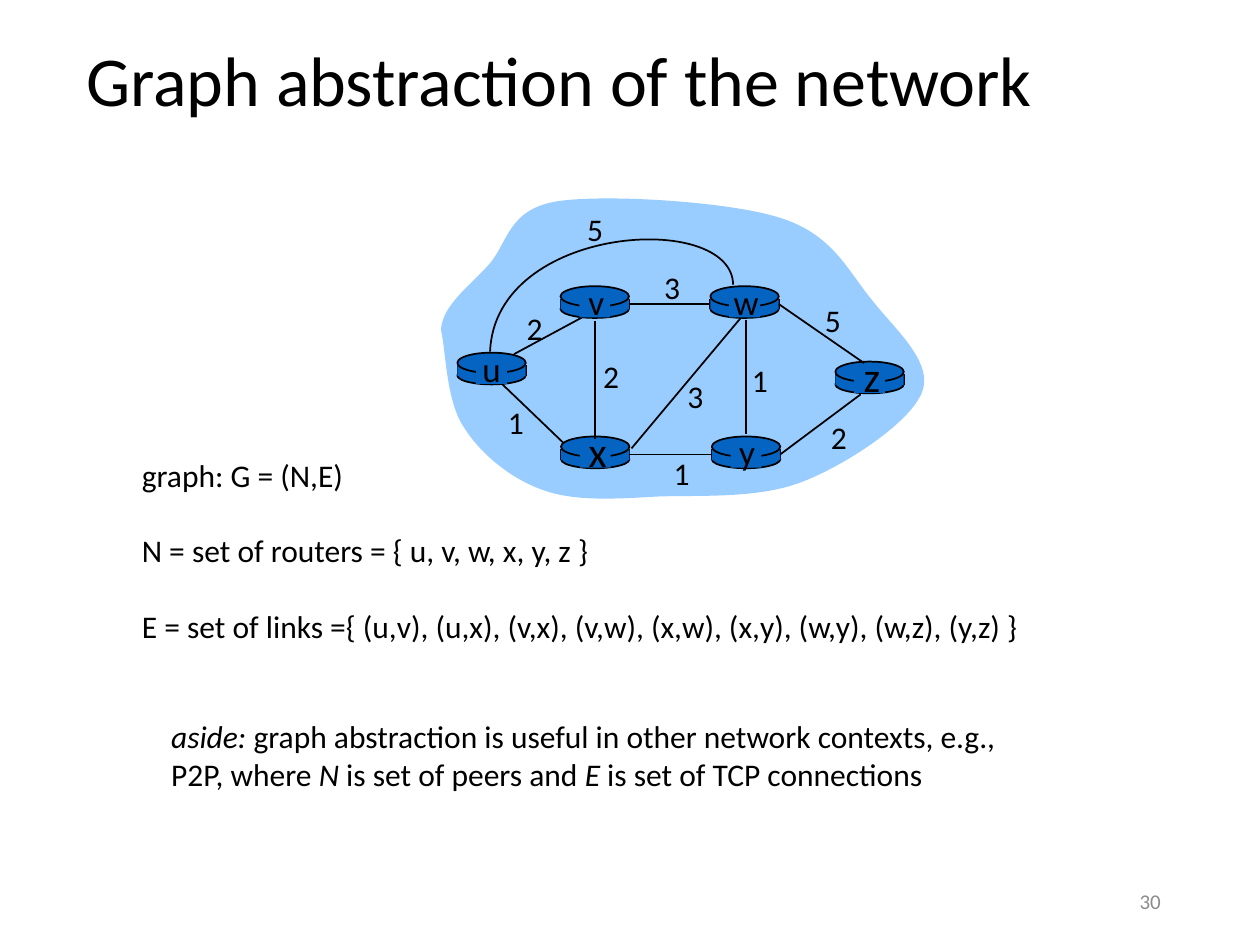
import dataclasses

import pptx
import pptx.dml.color
import pptx.enum.shapes
import pptx.enum.text
import pptx.oxml
import pptx.oxml.ns
import pptx.util

Cm = pptx.util.Cm
Pt = pptx.util.Pt
Shape = pptx.enum.shapes.MSO_SHAPE
Align = pptx.enum.text.PP_ALIGN


@dataclasses.dataclass(frozen=True)
class Theme:
    font: str = "Calibri"
    ink: str = "000000"
    muted: str = "8C8C8C"
    cloud: str = "99CCFF"
    router: str = "0563C1"
    title_size: int = 40
    body_size: int = 18
    number_size: int = 12
    line_width: int = 1


theme = Theme()

# Content; all places are in centimetres
TITLE = "Graph abstraction of the network"
DEFINITIONS = [
    [("graph: G = (N,E)", False)],
    [("N = set of routers = { u, v, w, x, y, z }", False)],
    [("E = set of links ={ (u,v), (u,x), (v,x), (v,w), (x,w), (x,y), "
      "(w,y), (w,z), (y,z) }", False)],
]
ASIDE = [
    [("aside:", True),
     (" graph abstraction is useful in other network contexts, e.g.,", False)],
    [("P2P, where ", False), ("N", True), (" is set of peers and ", False),
     ("E", True), (" is set of TCP connections", False)],
]
SLIDE_NUMBER = "30"

# Router name: left, top, label centre, label size
ROUTERS = {
    "u": (9.22, 7.11, 9.91, 7.43, 20),
    "x": (11.31, 8.8, 12.05, 9.08, 24),
    "v": (11.3, 5.77, 12.02, 6.08, 20),
    "w": (14.32, 5.77, 15.04, 6.08, 20),
    "y": (14.35, 8.8, 15.06, 9.11, 20),
    "z": (16.84, 7.29, 17.58, 7.58, 24),
}
ROUTER_WIDTH = 1.38
LEFT, RIGHT = 1, 3

# A link end is a point or a (router, side) joint
LINKS_BEHIND = [((10.36, 7.14), (11.88, 6.32))]
LINKS_IN_FRONT = [
    ((15.04, 6.45), (15.04, 8.74)),
    ((11.99, 6.48), (11.99, 8.84)),
    ((12.73, 9.04), (14.94, 6.4)),
    (("y", RIGHT), (17.35, 7.95)),
    (("x", RIGHT), ("y", LEFT)),
    ((11.35, 8.92), (10.13, 7.75)),
    (("v", RIGHT), ("w", LEFT)),
    (("w", RIGHT), (17.42, 7.32)),
]
# Link cost and its centre
COSTS = [
    ("2", 10.78, 6.61), ("2", 12.32, 7.57), ("1", 10.4, 8.51),
    ("3", 14.02, 7.98), ("1", 13.74, 9.54), ("1", 15.32, 7.65),
    ("2", 16.91, 8.81), ("5", 16.79, 6.45), ("3", 13.55, 5.79),
    ("5", 12, 4.61),
]

# Curves: a start, then two control points and an end for each piece
CLOUD = [
    (8.89, 6.65),
    (8.92, 6.15), (9.47, 5.77), (9.86, 5.33),
    (10.24, 4.9), (10.24, 4.22), (11.23, 4.06),
    (12.19, 3.91), (14.68, 4.06), (15.72, 4.39),
    (16.79, 4.72), (17.09, 5.46), (17.58, 6.05),
    (18.03, 6.63), (18.82, 7.29), (18.59, 7.9),
    (18.36, 8.51), (17.09, 9.35), (16.21, 9.7),
    (15.32, 10.06), (14.15, 9.98), (13.26, 10.01),
    (12.4, 10.06), (11.58, 10.11), (10.95, 9.88),
    (10.29, 9.65), (9.68, 9.14), (9.35, 8.61),
    (8.99, 8.08), (8.99, 7.06), (8.89, 6.65),
]
LONG_LINK = [(14.78, 5.74), (14.76, 4.24), (9.98, 4.52), (9.88, 7.09)]

presentation = pptx.Presentation()
presentation.slide_width, presentation.slide_height = Cm(25.4), Cm(19.05)
slide = presentation.slides.add_slide(presentation.slide_layouts[6])
shapes = slide.shapes


def color(value):
    return pptx.dml.color.RGBColor.from_string(value)


def style(shape, fill=None, outlined=False):
    shape.shadow.inherit = False
    if fill:
        shape.fill.solid()
        shape.fill.fore_color.rgb = color(fill)
    else:
        shape.fill.background()
    if outlined:
        shape.line.color.rgb = color(theme.ink)
        shape.line.width = Pt(theme.line_width)
    else:
        shape.line.fill.background()


def add_text(paragraphs, left, top, width, height, size, ink=theme.ink,
             align=Align.LEFT, middle=False, margin=0.25, gap=0, spacing=1.0):
    frame = shapes.add_textbox(Cm(left), Cm(top), Cm(width), Cm(height)).text_frame
    frame.word_wrap = True
    frame.margin_left = frame.margin_right = Cm(margin)
    if middle:
        frame.vertical_anchor = pptx.enum.text.MSO_ANCHOR.MIDDLE
    for index, runs in enumerate(paragraphs):
        paragraph = frame.add_paragraph() if index else frame.paragraphs[0]
        paragraph.alignment = align
        paragraph.line_spacing = spacing
        paragraph.space_before = Pt(gap if index else 0)
        paragraph.font.name = theme.font
        paragraph.font.size = Pt(size)
        paragraph.font.color.rgb = color(ink)
        for text, italic in runs:
            run = paragraph.add_run()
            run.text = text
            if italic:
                run.font.italic = True


def add_label(text, center_x, center_y, size):
    width, height = 0.88, 0.055 * size
    add_text([[(text, False)]], center_x - width / 2, center_y - height / 2,
             width, height, size, align=Align.CENTER, middle=True, margin=0)


def add_curve(points, closed):
    """Outline all points, then turn each three segments into one Bezier."""
    corners = [(Cm(x), Cm(y)) for x, y in points]
    builder = shapes.build_freeform(*corners[0])
    builder.add_line_segments(corners[1:], close=closed)
    curve = builder.convert_to_shape()
    segments = list(curve._element.iter(pptx.oxml.ns.qn("a:lnTo")))
    for first in range(0, len(segments), 3):
        bezier = pptx.oxml.parse_xml(
            '<a:cubicBezTo xmlns:a="http://schemas.openxmlformats.org/drawingml/2006/main"/>')
        segments[first].addprevious(bezier)
        for segment in segments[first:first + 3]:
            bezier.append(segment[0])
            segment.getparent().remove(segment)
    return curve


def add_line(start, end):
    line = shapes.add_connector(pptx.enum.shapes.MSO_CONNECTOR.STRAIGHT,
                                *(Cm(value) for value in start + end))
    line.line.color.rgb = color(theme.ink)
    line.line.width = Pt(theme.line_width)
    line._element.spPr.append(pptx.oxml.parse_xml(
        '<a:effectLst xmlns:a="http://schemas.openxmlformats.org/drawingml/2006/main"/>'))
    return line


def add_part(kind, left, top, width, height, outlined=False):
    part = shapes.add_shape(kind, Cm(left), Cm(top), Cm(width), Cm(height))
    style(part, theme.router, outlined)
    return part


def add_router(left, top):
    """Draw a flat cylinder and return its body, which links join."""
    add_part(Shape.OVAL, left, top + 0.28, ROUTER_WIDTH, 0.36, True)
    for side in (left, left + ROUTER_WIDTH):
        add_line((side, top + 0.25), (side, top + 0.47))
    body = add_part(Shape.RECTANGLE, left, top + 0.25, ROUTER_WIDTH, 0.22)
    add_part(Shape.OVAL, left, top, ROUTER_WIDTH, 0.41, True)
    return body


def link_point(end):
    if end[0] not in ROUTERS:
        return end
    left, top = ROUTERS[end[0]][:2]
    return left + (ROUTER_WIDTH if end[1] == RIGHT else 0), top + 0.36


def add_link(start, end):
    link = add_line(link_point(start), link_point(end))
    for joint, connect in ((start, link.begin_connect), (end, link.end_connect)):
        if joint[0] in ROUTERS:
            connect(bodies[joint[0]], joint[1])


# Network cloud, routers and links
style(add_curve(CLOUD, True), theme.cloud)
for ends in LINKS_BEHIND:
    add_link(*ends)
bodies = {name: add_router(*place[:2]) for name, place in ROUTERS.items()}
for ends in LINKS_IN_FRONT:
    add_link(*ends)
style(add_curve(LONG_LINK, False), outlined=True)

# Router names and link costs
for name, (left, top, *label) in ROUTERS.items():
    add_part(Shape.RECTANGLE, left + 0.38, top + 0.05, 0.62, 0.58)
    add_label(name, *label)
for cost, *center in COSTS:
    add_label(cost, *center, theme.body_size)

# Title, definitions, aside and slide number
add_text([[(TITLE, False)]], 1.49, 0.58, 21.59, 2.21, theme.title_size,
         middle=True, spacing=0.9)
add_text(DEFINITIONS, 2.61, 9.07, 18.42, 4.11, theme.body_size, gap=21.5)
add_text(ASIDE, 3.2, 14.33, 17.48, 1.8, theme.body_size)
add_text([[(SLIDE_NUMBER, False)]], 17.93, 17.65, 5.72, 1.02, theme.number_size,
         ink=theme.muted, align=Align.RIGHT, middle=True)

presentation.save("out.pptx")
